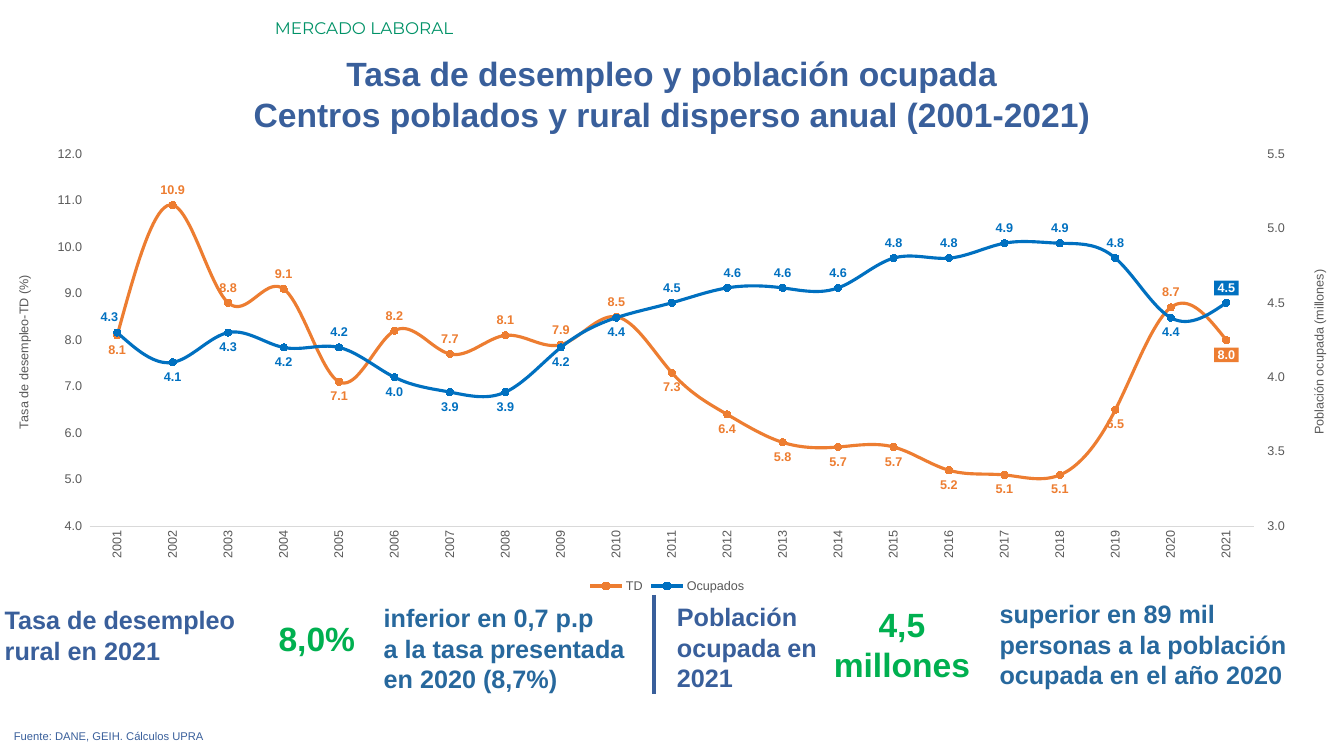
from copy import deepcopy

from lxml import etree
from pptx import Presentation
from pptx.chart.axis import ValueAxis
from pptx.chart.data import CategoryChartData
from pptx.dml.color import RGBColor
from pptx.enum.chart import (XL_CHART_TYPE, XL_LABEL_POSITION, XL_LEGEND_POSITION,
                             XL_MARKER_STYLE, XL_TICK_MARK)
from pptx.enum.shapes import MSO_CONNECTOR
from pptx.enum.text import PP_ALIGN
from pptx.oxml import parse_xml
from pptx.oxml.ns import nsdecls, qn
from pptx.util import Cm, Pt

LEFT, CENTER, RIGHT, JUSTIFY = PP_ALIGN.LEFT, PP_ALIGN.CENTER, PP_ALIGN.RIGHT, PP_ALIGN.JUSTIFY
ABOVE, BELOW = XL_LABEL_POSITION.ABOVE, XL_LABEL_POSITION.BELOW
NO_TICK, TICK_OUT = XL_TICK_MARK.NONE, XL_TICK_MARK.OUTSIDE

NAVY = RGBColor(0x39, 0x5F, 0x9B)
STEEL = RGBColor(0x27, 0x68, 0x9D)
GREEN = RGBColor(0x00, 0xB0, 0x50)
TEAL = RGBColor(0x00, 0x92, 0x67)
ORANGE = RGBColor(0xED, 0x7D, 0x31)
BLUE = RGBColor(0x00, 0x70, 0xC0)
GRAY = RGBColor(0x59, 0x59, 0x59)
PALE = RGBColor(0xD9, 0xD9, 0xD9)
BLACK = RGBColor(0x00, 0x00, 0x00)
WHITE = RGBColor(0xFF, 0xFF, 0xFF)

# (left, top, width, height in cm), paragraphs, size, colour, bold, alignment, font
TEXTS = [
    ((6.68, 0.33, 27.18, 0.76), ["MERCADO LABORAL"], 12, TEAL, False, LEFT, "Montserrat"),
    ((0, 1.22, 33.86, 2.31),
     ["Tasa de desempleo y población ocupada",
      "Centros poblados y rural disperso anual (2001-2021)"], 24, NAVY, True, CENTER, "Arial"),
    ((-0.13, 15.11, 7.42, 1.8), ["Tasa de desempleo rural en 2021"],
     18, NAVY, True, LEFT, "Arial"),
    ((6.1, 15.44, 3.1, 1.27), ["8,0%"], 24, GREEN, True, RIGHT, "Arial"),
    ((9.42, 15.06, 7.32, 2.57),
     ["inferior en 0,7 p.p", "a la tasa presentada en 2020 (8,7%)"],
     18, STEEL, True, LEFT, "Arial"),
    ((0.1, 18.26, 32.79, 0.61), ["Fuente: DANE, GEIH. Cálculos UPRA"],
     8, NAVY, False, JUSTIFY, "Arial"),
    ((16.81, 15.04, 4.32, 2.57), ["Población ocupada en 2021"], 18, NAVY, True, LEFT, "Arial"),
    ((20.57, 15.09, 4.32, 2.31), ["4,5 millones"], 24, GREEN, True, CENTER, "Arial"),
    ((24.94, 14.96, 8.33, 2.57),
     ["superior en 89 mil personas a la población ocupada en el año 2020"],
     18, STEEL, True, LEFT, "Arial"),
]
DIVIDER = (16.48, 14.99, 16.48, 17.5)
CHART_BOX = (0.33, 3.48, 33.2, 12.09)
PLOT_BOX = {"x": 0.058, "y": 0.033, "w": 0.884, "h": 0.776}
LEGEND_CORNER = {"x": 0.435, "y": 0.91}
NUMBER_FORMAT = "_-0.0_-"
YEARS = [str(year) for year in range(2001, 2022)]
LAST = len(YEARS) - 1
# "flipped" years carry their label on the other side; "nudged" ones are shifted sideways
SERIES = [
    {"name": "TD", "color": ORANGE, "side": BELOW, "other": ABOVE,
     "values": [8.1, 10.9, 8.8, 9.1, 7.1, 8.2, 7.7, 8.1, 7.9, 8.5, 7.3,
                6.4, 5.8, 5.7, 5.7, 5.2, 5.1, 5.1, 6.5, 8.7, 8.0],
     "flipped": [1, 2, 3, 5, 6, 7, 8, 9, 19], "nudged": {}},
    {"name": "Ocupados", "color": BLUE, "side": ABOVE, "other": BELOW,
     "values": [4.3, 4.1, 4.3, 4.2, 4.2, 4.0, 3.9, 3.9, 4.2, 4.4, 4.5,
                4.6, 4.6, 4.6, 4.8, 4.8, 4.9, 4.9, 4.8, 4.4, 4.5],
     "flipped": [1, 2, 3, 5, 6, 7, 8, 9, 19], "nudged": {0: -0.006, 11: 0.004}},
]


def style(font, size, color, bold=False, name="Arial"):
    font.size, font.bold, font.name = Pt(size), bold, name
    font.color.rgb = color


def add_text(page, place, lines, size, color, bold, align, font_name):
    box = page.shapes.add_textbox(*map(Cm, place))
    frame = box.text_frame
    frame.word_wrap = True
    frame.text = "\n".join(lines)
    for para in frame.paragraphs:
        para.alignment = align
        style(para.font, size, color, bold, font_name)


def manual_layout(**fields):
    parts = "".join(f'<c:{key} val="{value}"/>' for key, value in fields.items())
    return parse_xml(f'<c:layout {nsdecls("c")}><c:manualLayout>{parts}'
                     '</c:manualLayout></c:layout>')


def place_part(part, position, **fields):
    """Give a chart part a fixed place instead of an automatic one."""
    for layout in part.findall(qn("c:layout")):
        part.remove(layout)
    part.insert(position, manual_layout(**fields))


def style_series(chart, number, info):
    series, color = chart.plots[0].series[number], info["color"]
    series.smooth = True
    series.format.line.color.rgb = color
    series.format.line.width = Pt(2.25)
    series.marker.style = XL_MARKER_STYLE.CIRCLE
    series.marker.size = 5
    series.marker.format.fill.solid()
    series.marker.format.fill.fore_color.rgb = color
    series.marker.format.line.color.rgb = color
    labels = series.data_labels
    labels.show_value = True
    labels.position = info["side"]
    labels.number_format, labels.number_format_is_linked = NUMBER_FORMAT, False
    style(labels.font, 9, color, True)
    for index in sorted({*info["flipped"], *info["nudged"], LAST}):
        label = series.points[index].data_label
        style(label.font, 9, WHITE if index == LAST else color, True)
        label.position = info["other"] if index in info["flipped"] else info["side"]
        node = chart.element.xpath(
            f'.//c:ser[c:idx/@val="{number}"]/c:dLbls/c:dLbl[c:idx/@val="{index}"]')[0]
        if index in info["nudged"]:
            node.insert(1, manual_layout(x=info["nudged"][index], y=0))
        if index == LAST:
            node.find(qn("c:txPr")).addprevious(parse_xml(
                f'<c:spPr {nsdecls("c", "a")}><a:solidFill><a:srgbClr val="{color}"/>'
                '</a:solidFill></c:spPr>'))


def style_value_axis(axis, title, low, high, step, tick):
    axis.has_major_gridlines = False
    axis.minimum_scale, axis.maximum_scale, axis.major_unit = low, high, step
    axis.major_tick_mark, axis.minor_tick_mark = tick, NO_TICK
    axis.format.line.fill.background()
    axis.tick_labels.number_format = NUMBER_FORMAT
    axis.tick_labels.number_format_is_linked = False
    style(axis.tick_labels.font, 9, GRAY)
    frame = axis.axis_title.text_frame
    frame.text = title
    style(frame.paragraphs[0].font, 9, GRAY)


def move_to_right_axis(plot_area):
    """Put the second series in its own line chart and return the new value axis."""
    left_chart = plot_area.find(qn("c:lineChart"))
    right_chart = deepcopy(left_chart)
    left_chart.addnext(right_chart)
    left_chart.remove(left_chart.findall(qn("c:ser"))[1])
    right_chart.remove(right_chart.findall(qn("c:ser"))[0])
    year_axis = deepcopy(plot_area.find(qn("c:catAx")))
    left_axis = plot_area.find(qn("c:valAx"))
    right_axis = deepcopy(left_axis)
    left_axis.addnext(right_axis)
    right_axis.addnext(year_axis)
    for node, own, cross in ((year_axis, "5001", "5002"), (right_axis, "5002", "5001")):
        node.find(qn("c:axId")).set("val", own)
        node.find(qn("c:crossAx")).set("val", cross)
    for node, identifier in zip(right_chart.findall(qn("c:axId")), ("5001", "5002")):
        node.set("val", identifier)
    year_axis.find(qn("c:delete")).set("val", "1")
    right_axis.find(qn("c:axPos")).set("val", "r")
    right_axis.find(qn("c:crosses")).set("val", "max")
    return ValueAxis(right_axis)


def add_rates_chart(page):
    data = CategoryChartData(number_format=NUMBER_FORMAT)
    data.categories = YEARS
    for info in SERIES:
        data.add_series(info["name"], info["values"])
    chart = page.shapes.add_chart(XL_CHART_TYPE.LINE_MARKERS, *map(Cm, CHART_BOX), data).chart
    style(chart.font, 10, BLACK)
    chart.has_title = False
    chart.has_legend = True
    chart.legend.position = XL_LEGEND_POSITION.BOTTOM
    chart.legend.include_in_layout = False
    style(chart.legend.font, 9, GRAY)
    chart.plots[0].vary_by_categories = False
    for number, info in enumerate(SERIES):
        style_series(chart, number, info)

    years = chart.category_axis
    years.major_tick_mark = years.minor_tick_mark = NO_TICK
    years.format.line.color.rgb = PALE
    years.format.line.width = Pt(0.75)
    style(years.tick_labels.font, 9, GRAY)
    style_value_axis(chart.value_axis, "Tasa de desempleo-TD (%)", 4, 12, 1, NO_TICK)

    plot_area = chart.element.xpath(".//c:plotArea")[0]
    right_axis = move_to_right_axis(plot_area)
    style_value_axis(right_axis, "Población ocupada (millones)", 3, 5.5, 0.5, TICK_OUT)
    for body in plot_area.xpath("./c:catAx/c:txPr/a:bodyPr | ./c:valAx/c:title//a:bodyPr"):
        body.set("rot", "-5400000")
        body.set("vert", "horz")
    place_part(plot_area, 0, layoutTarget="inner", xMode="edge", yMode="edge", **PLOT_BOX)
    legend = chart.element.xpath(".//c:legend")[0]
    place_part(legend, 1, xMode="edge", yMode="edge", **LEGEND_CORNER)


def main():
    deck = Presentation()
    deck.slide_width, deck.slide_height = Cm(33.87), Cm(19.05)
    page = deck.slides.add_slide(deck.slide_layouts[6])
    for text in TEXTS:
        add_text(page, *text)
    divider = page.shapes.add_connector(MSO_CONNECTOR.STRAIGHT, *map(Cm, DIVIDER))
    divider.line.color.rgb = NAVY
    divider.line.width = Pt(2.25)
    etree.SubElement(divider.element.spPr, qn("a:effectLst"))
    add_rates_chart(page)
    deck.save("out.pptx")


if __name__ == "__main__":
    main()
